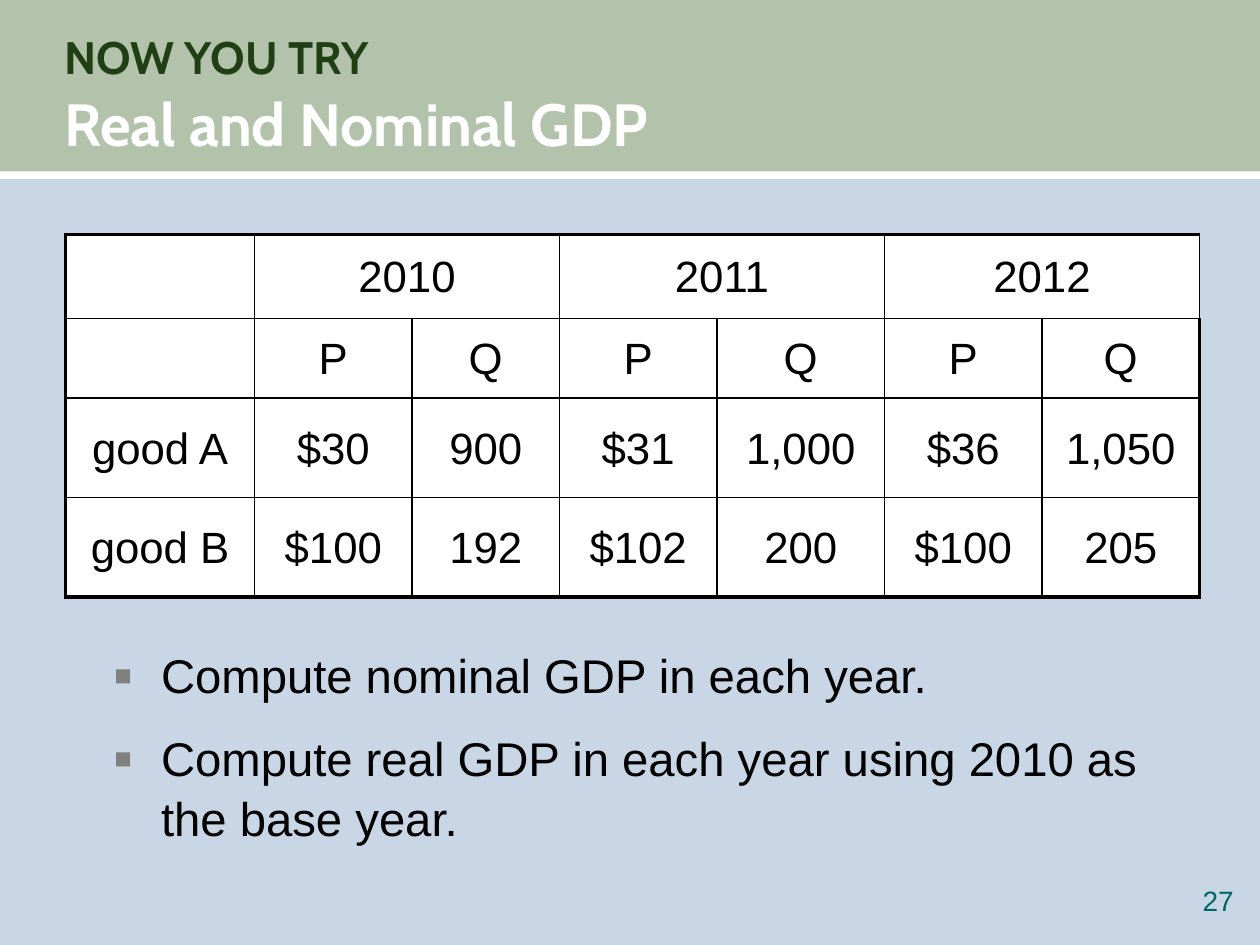
from dataclasses import dataclass

from lxml import etree
from pptx import Presentation
from pptx import util as u
from pptx.dml.color import RGBColor
from pptx.enum import shapes, text
from pptx.oxml import ns


@dataclass(frozen=True)
class Theme:
    back: str = "C9D6E5"
    band: str = "B3C2AA"
    kicker: str = "203F15"
    white: str = "FFFFFF"
    ink: str = "000000"
    mark: str = "808080"
    num: str = "006666"
    head: str = "Cabin"
    body: str = "Arial"
    small: int = 16
    cell: int = 25
    list: int = 27
    over: int = 26
    title: int = 34
    lead: float = 1.05
    thin: float = 1
    thick: float = 2.25


T = Theme()
WIDE, HIGH = 10, 7.5
COLS = [1.5, 1.25, 1.17, 1.25, 1.33, 1.25, 1.25]
ROWS = [0.67, 0.63, 0.79, 0.79]
DATA = [
    ["", "2010", "", "2011", "", "2012", ""],
    ["", "P", "Q", "P", "Q", "P", "Q"],
    ["good A", "$30", "900", "$31", "1,000", "$36", "1,050"],
    ["good B", "$100", "192", "$102", "200", "$100", "205"],
]
TASKS = [
    "Compute nominal GDP in each year.",
    "Compute real GDP in each year using 2010 as the base year.",
]


def tint(fill, hue):
    fill.solid()
    fill.fore_color.rgb = RGBColor.from_string(hue)


def style(run, size, hue, face=T.body, bold=False):
    run.font.size, run.font.name, run.font.bold = u.Pt(size), face, bold
    run.font.color.rgb = RGBColor.from_string(hue)


def add(top, tag, **atts):
    return etree.SubElement(top, ns.qn(tag), atts)


def space(para, pct):
    """Set the line spacing and a space before as a share of the type size."""
    para.line_spacing = T.lead
    props = para._p.get_or_add_pPr()
    add(add(props, "a:spcBef"), "a:spcPct", val=str(pct * 1000))
    return props


def bar(slide, top, high, hue):
    box = slide.shapes.add_shape(shapes.MSO_SHAPE.RECTANGLE, 0, u.Inches(top),
                                 u.Inches(WIDE), u.Inches(high))
    box.shadow.inherit = False
    tint(box.fill, hue)
    box.line.fill.background()


def words(slide, left, top, wide, high, lines, inset=True):
    box = slide.shapes.add_textbox(*map(u.Inches, (left, top, wide, high)))
    frame = box.text_frame
    frame.word_wrap = True
    if not inset:
        frame.margin_left = frame.margin_right = 0
        frame.margin_top = frame.margin_bottom = 0
    frame.text = "\n".join(lines)
    return frame


def title(slide, over, main):
    frame = words(slide, 0.51, 0.22, 9.02, 1.03, [over + "\v" + main], False)
    frame.vertical_anchor = text.MSO_ANCHOR.MIDDLE
    para = frame.paragraphs[0]
    para.line_spacing = T.lead
    first, last = para.runs
    style(first, T.over, T.kicker, T.head, True)
    style(last, T.title, T.white, T.head, True)


def bullets(slide, lines):
    frame = words(slide, 0.8, 5.06, 8.64, 2.03, lines)
    for para in frame.paragraphs:
        props = space(para, 50)
        props.set("marL", str(u.Inches(0.38)))
        props.set("indent", str(-u.Inches(0.38)))
        add(add(props, "a:buClr"), "a:srgbClr", val=T.mark)
        add(props, "a:buSzPct", val="120000")
        add(props, "a:buFont", typeface=T.body)
        add(props, "a:buChar", char="▪")
        style(para.runs[0], T.list, T.ink)


def edge(cell, side, width):
    line = add(cell._tc.get_or_add_tcPr(), "a:ln" + side, w=str(u.Pt(width)))
    add(add(line, "a:solidFill"), "a:srgbClr", val=T.ink)


def grid(slide):
    frame = slide.shapes.add_table(len(ROWS), len(COLS), u.Inches(0.52), u.Inches(1.86),
                                   u.Inches(sum(COLS)), u.Inches(sum(ROWS)))
    table = frame.table
    for col, wide in zip(table.columns, COLS):
        col.width = u.Inches(wide)
    for row, high in zip(table.rows, ROWS):
        row.height = u.Inches(high)
    for r, row in enumerate(DATA):
        for c, word in enumerate(row):
            cell = table.cell(r, c)
            # Thick lines on the outside, thin lines within
            outer = {"L": c == 0, "R": c == len(COLS) - 1,
                     "T": r == 0, "B": r == len(ROWS) - 1}
            for side, out in outer.items():
                edge(cell, side, T.thick if out else T.thin)
            tint(cell.fill, T.white)
            cell.vertical_anchor = text.MSO_ANCHOR.MIDDLE
            if word:
                cell.text_frame.text = word
                para = cell.text_frame.paragraphs[0]
                para.alignment = text.PP_ALIGN.CENTER
                space(para, 45)
                style(para.runs[0], T.cell, T.ink)
    # Each year spans its price and quantity
    for c in range(1, len(COLS), 2):
        table.cell(0, c).merge(table.cell(0, c + 1))


def number(slide, value):
    para = words(slide, 9.24, 7.01, 0.55, 0.32, [value], False).paragraphs[0]
    para.alignment = text.PP_ALIGN.RIGHT
    style(para.runs[0], T.small, T.num)


def main():
    deck = Presentation()
    deck.slide_width, deck.slide_height = u.Inches(WIDE), u.Inches(HIGH)
    slide = deck.slides.add_slide(deck.slide_layouts[6])
    tint(slide.background.fill, T.back)

    # Heading band with a white rule beneath
    bar(slide, -0.01, 1.41, T.band)
    title(slide, "NOW YOU TRY", "Real and Nominal GDP")
    bar(slide, 1.36, 0.06, T.white)

    # Prices and quantities, then the tasks
    grid(slide)
    bullets(slide, TASKS)
    number(slide, "27")
    deck.save("out.pptx")


if __name__ == "__main__":
    main()
